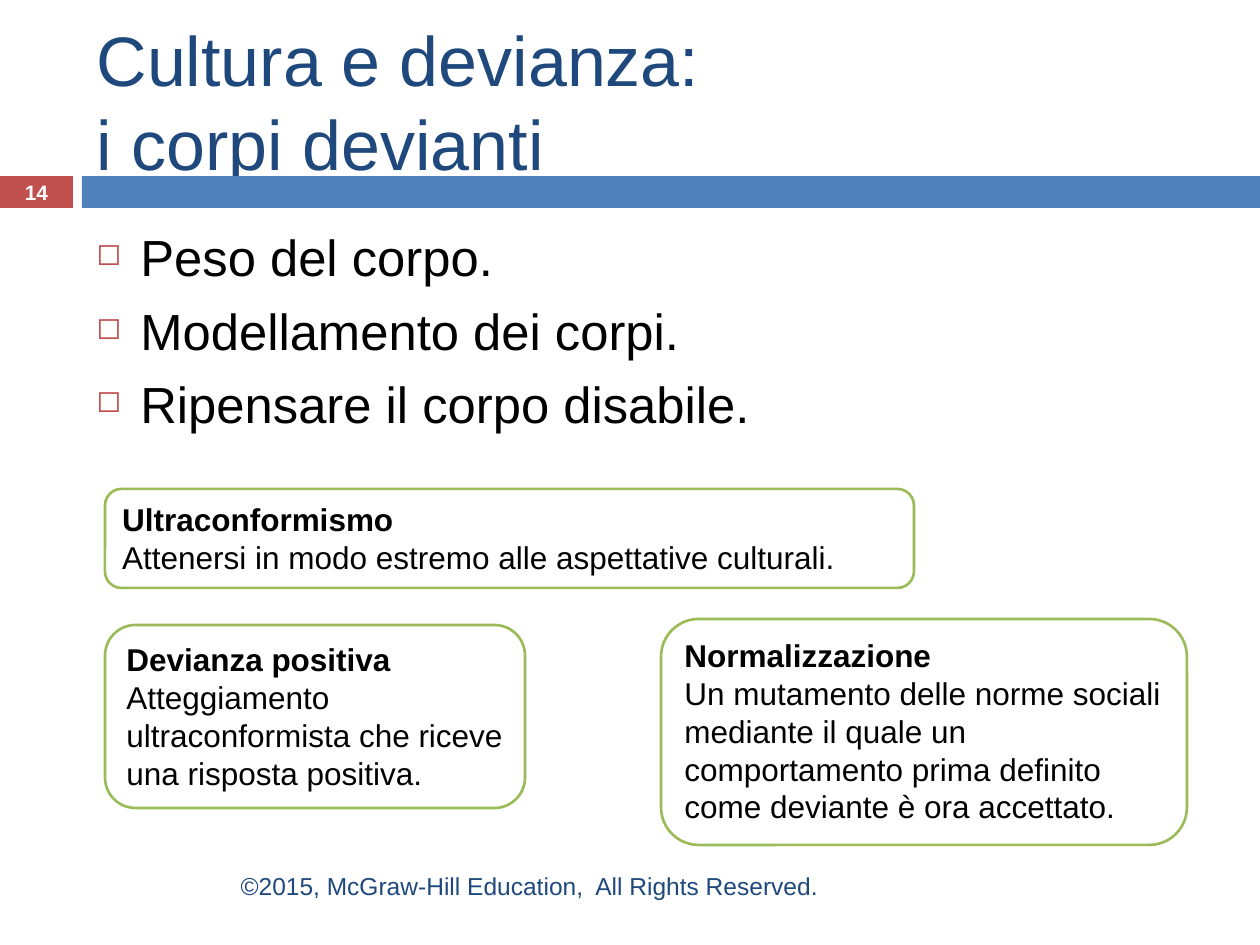
from lxml import etree
from pptx import Presentation
from pptx.dml.color import RGBColor
from pptx.enum.shapes import MSO_SHAPE
from pptx.enum.text import MSO_ANCHOR, MSO_AUTO_SIZE, PP_ALIGN
from pptx.oxml.ns import qn
from pptx.util import Pt

PX = 914400 // 126
RECT, ROUND = MSO_SHAPE.RECTANGLE, MSO_SHAPE.ROUNDED_RECTANGLE
TOP, MID = MSO_ANCHOR.TOP, MSO_ANCHOR.MIDDLE
LEFT, CENTER, RIGHT = PP_ALIGN.LEFT, PP_ALIGN.CENTER, PP_ALIGN.RIGHT
FIXED = MSO_AUTO_SIZE.NONE
NAVY, RED, BLUE, GREEN = "1F497D", "C0504D", "4F81BD", "9BBB59"
WHITE, BLACK = "FFFFFF", "000000"


def rgb(code):
    return RGBColor.from_string(code)


def emu(box):
    return [n * PX for n in box]


def write(shape, text, size, color, align=LEFT, anchor=TOP, bold=False):
    frame = shape.text_frame
    frame.text = text
    frame.word_wrap = True
    frame.auto_size = FIXED
    frame.vertical_anchor = anchor
    for para in frame.paragraphs:
        para.alignment = align
        for run in para.runs:
            font = run.font
            font.name, font.size, font.bold = "Arial", Pt(size), bold
            font.color.rgb = rgb(color)
    return frame


def label(slide, box, *args, **style):
    return write(slide.shapes.add_textbox(*emu(box)), *args, **style)


def panel(slide, kind, box, fill, line=None):
    shape = slide.shapes.add_shape(kind, *emu(box))
    shape.shadow.inherit = False
    shape.fill.solid()
    shape.fill.fore_color.rgb = rgb(fill)
    if line:
        shape.line.color.rgb = rgb(line)
        shape.line.width = Pt(1.5)
    else:
        shape.line.fill.background()
    return shape


def band(slide, box, number):
    left, top, width, height = box
    tab, gap = 73, 9
    start = tab + gap
    panel(slide, RECT, (left, top, tab, height), RED)
    panel(slide, RECT, (left + start, top, width - start, height), BLUE)
    label(slide, (left, top, tab, height), number, 11.9, WHITE,
          align=CENTER, anchor=MID, bold=True)


def head(slide, box, text):
    title = slide.shapes.title
    title.left, title.top, title.width, title.height = emu(box)
    write(title, text, 40, NAVY, anchor=MID)


def bullets(slide, box, items):
    frame = label(slide, box, "\n".join(items), 29, BLACK)
    for spot, para in enumerate(frame.paragraphs):
        props = para._p.get_or_add_pPr()
        props.set("marL", str(44 * PX))
        props.set("indent", str(-44 * PX))
        tint = etree.SubElement(props, qn("a:buClr"))
        etree.SubElement(tint, qn("a:srgbClr")).set("val", RED)
        etree.SubElement(props, qn("a:buSzPct")).set("val", "60000")
        etree.SubElement(props, qn("a:buChar")).set("char", "◻")
        para.space_before = Pt(7 if spot else 0)


def card(slide, box, term, text):
    shape = panel(slide, ROUND, box, WHITE, GREEN)
    frame = write(shape, f"{term}\n{text}", 18, BLACK)
    frame.paragraphs[0].runs[0].font.bold = True


def main():
    deck = Presentation()
    deck.slide_width, deck.slide_height = emu((1260, 945))
    slide = deck.slides.add_slide(deck.slide_layouts[5])
    band(slide, (0, 176, 1260, 32), "14")
    head(slide, (84, 32, 1124, 136), "Cultura e devianza: \vi corpi devianti")
    bullets(slide, (84, 220, 1124, 620), [
        "Peso del corpo.",
        "Modellamento dei corpi.",
        "Ripensare il corpo disabile.",
    ])
    cards = [
        ((105, 489, 809, 99), "Ultraconformismo",
         "Attenersi in modo estremo alle aspettative culturali."),
        ((105, 625, 420, 183), "Devianza positiva",
         "Atteggiamento ultraconformista che riceve una risposta positiva."),
        ((661, 619, 526, 226), "Normalizzazione",
         "Un mutamento delle norme sociali mediante il quale un "
         "comportamento prima definito come deviante è ora accettato."),
    ]
    for box, term, text in cards:
        card(slide, box, term, text)
    label(slide, (84, 861, 747, 50),
          "©2015, McGraw-Hill Education,  All Rights Reserved.",
          14, NAVY, align=RIGHT, anchor=MID)
    deck.save("out.pptx")


if __name__ == "__main__":
    main()
